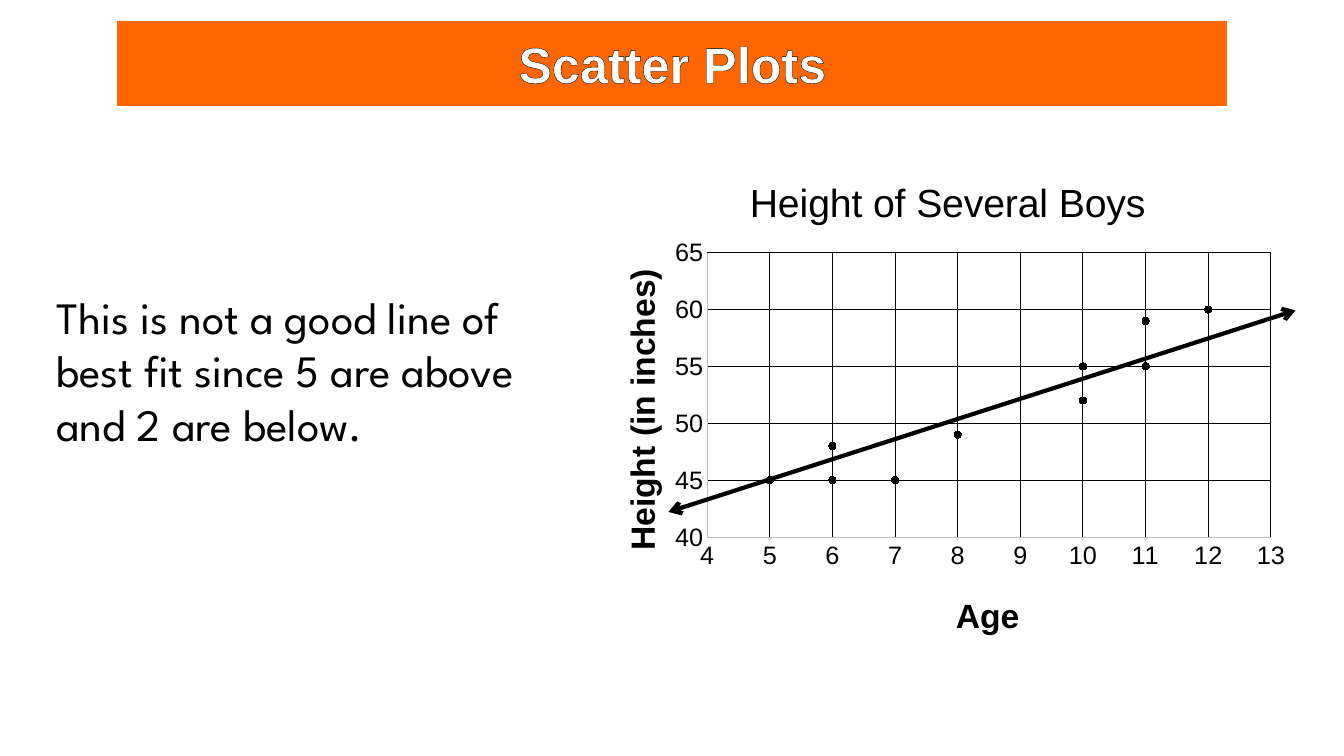
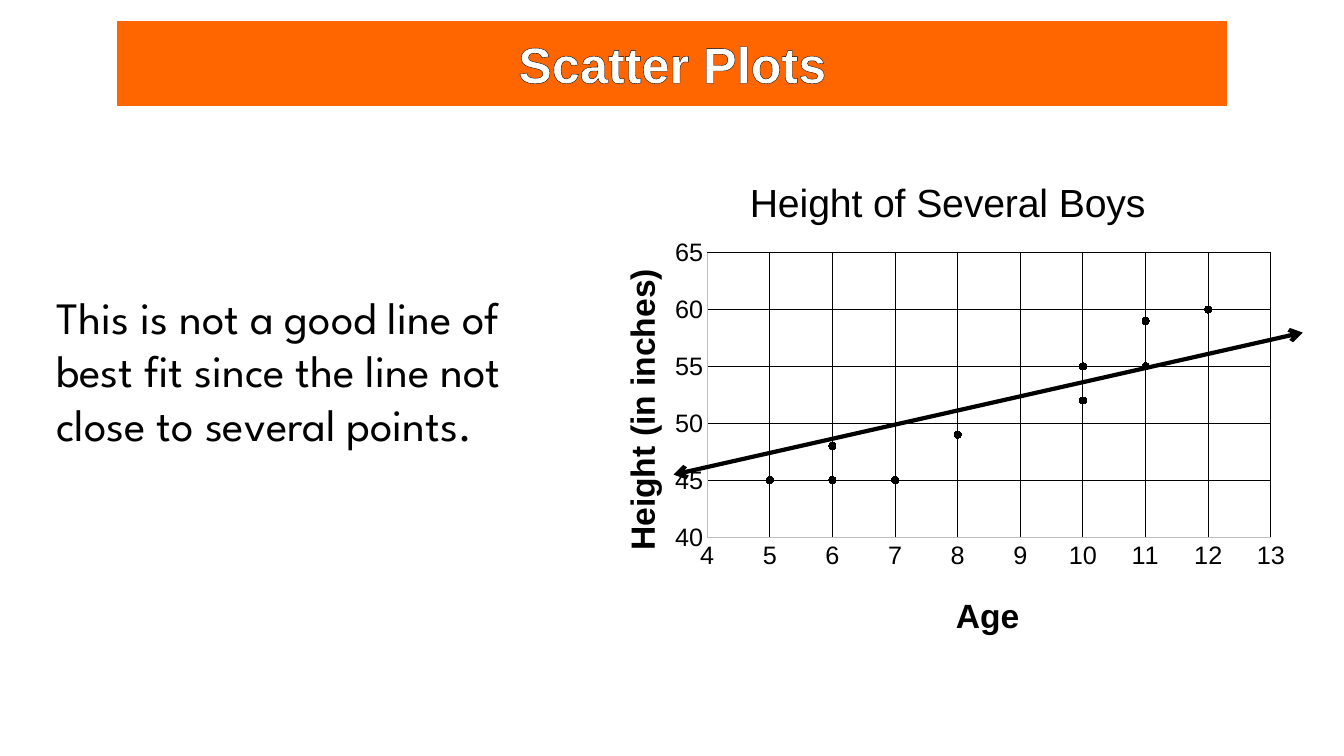
from typing import NamedTuple

from lxml.etree import SubElement
from pptx import Presentation
from pptx.chart.data import XyChartData
from pptx.dml.color import RGBColor
from pptx.enum.chart import XL_CHART_TYPE, XL_MARKER_STYLE, XL_TICK_MARK
from pptx.enum.shapes import MSO_CONNECTOR
from pptx.enum.text import MSO_ANCHOR, MSO_AUTO_SIZE, PP_ALIGN
from pptx.oxml import parse_xml
from pptx.oxml.ns import nsdecls, qn
from pptx.util import Cm, Pt

COLORS = {"banner": "FF6600", "banner_text": "FFFFFF", "ink": "000000", "axis": "BFBFBF"}
HEADING_FONT = "Arial"
BODY_FONT = "League Spartan"

BOYS = [(11, 55), (10, 55), (8, 49), (6, 45), (10, 52),
        (11, 59), (7, 45), (12, 60), (6, 48), (5, 45)]


class Box(NamedTuple):
    left: float
    top: float
    width: float
    height: float


class FitLine(NamedTuple):
    x1: float
    y1: float
    x2: float
    y2: float


class Example(NamedTuple):
    verdict: str
    fit_line: FitLine


class AxisStyle(NamedTuple):
    title: str
    title_left: float
    title_top: float
    minimum: int
    maximum: int
    step: int


BANNER = Box(2.97, 0.69, 27.94, 1.8)
VERDICT = Box(1.42, 7.29, 12.8, 4.11)
PLOT = Box(14.76, 3.68, 17.98, 12.8)

AGE_AXIS = AxisStyle("Age", 0.51, 0.87, 4, 13, 1)
HEIGHT_AXIS = AxisStyle("Height (in inches)", 0.04, 0.23, 40, 65, 5)

EXAMPLES = [
    Example("This is not a good line of best fit since 5 are above and 2 are below.",
            FitLine(16.84, 12.9, 32.64, 7.82)),
    Example("This is not a good line of best fit since the line not close to several points.",
            FitLine(16.97, 11.96, 32.82, 8.38)),
]


def color(name: str) -> RGBColor:
    return RGBColor.from_string(COLORS[name])


def place(shape, box: Box) -> None:
    shape.left, shape.top, shape.width, shape.height = (Cm(length) for length in box)


def style_font(font, size: float, name: str = HEADING_FONT,
               ink: str = "ink", bold: bool = False) -> None:
    font.size = Pt(size)
    font.name = name
    font.bold = bold
    font.color.rgb = color(ink)


def style_line(line, ink: str, width: float) -> None:
    line.color.rgb = color(ink)
    line.width = Pt(width)


def add_banner(slide) -> None:
    banner = slide.shapes.title
    place(banner, BANNER)
    banner.fill.solid()
    banner.fill.fore_color.rgb = color("banner")
    style_line(banner.line, "banner", 0.75)
    frame = banner.text_frame
    frame.text = "Scatter Plots"
    frame.vertical_anchor = MSO_ANCHOR.MIDDLE
    frame.auto_size = MSO_AUTO_SIZE.SHAPE_TO_FIT_TEXT
    heading = frame.paragraphs[0]
    heading.alignment = PP_ALIGN.CENTER
    heading.space_after = Pt(12)
    style_font(heading.font, 36, ink="banner_text", bold=True)
    outline = parse_xml(
        f'<a:ln {nsdecls("a")} w="{Pt(0.75)}"><a:solidFill>'
        f'<a:srgbClr val="{COLORS["ink"]}"/></a:solidFill></a:ln>')
    heading.runs[0].font._element.insert(0, outline)


def add_verdict(slide, text: str) -> None:
    body = slide.placeholders[1]
    place(body, VERDICT)
    frame = body.text_frame
    frame.text = text
    frame.word_wrap = True
    frame.auto_size = MSO_AUTO_SIZE.SHAPE_TO_FIT_TEXT
    frame.vertical_anchor = MSO_ANCHOR.TOP
    frame.margin_left = frame.margin_top = frame.margin_right = frame.margin_bottom = 0
    verdict = frame.paragraphs[0]
    verdict.alignment = PP_ALIGN.LEFT
    verdict.space_before = Pt(0)
    verdict.space_after = Pt(6)
    style_font(verdict.font, 32, BODY_FONT)
    properties = verdict._p.get_or_add_pPr()
    properties.set("marL", "0")
    properties.set("indent", "0")
    bullet_off = parse_xml(f'<a:buNone {nsdecls("a")}/>')
    properties.find(qn("a:defRPr")).addprevious(bullet_off)


def manual_layout(x: float, y: float, inner_size: str = ""):
    target = '<c:layoutTarget val="inner"/>' if inner_size else ""
    return parse_xml(
        f'<c:layout {nsdecls("c")}><c:manualLayout>{target}'
        f'<c:xMode val="edge"/><c:yMode val="edge"/>'
        f'<c:x val="{x}"/><c:y val="{y}"/>{inner_size}</c:manualLayout></c:layout>')


def set_title(owner, title, text: str, size: float, left: float, top: float,
              bold: bool = False) -> None:
    """Give a chart or an axis its title at a fraction of the chart's size."""
    owner.has_title = True
    title.text_frame.text = text
    style_font(title.text_frame.paragraphs[0].font, size, bold=bold)
    element = title._element
    for old in element.findall(qn("c:layout")):
        element.remove(old)
    element.find(qn("c:tx")).addnext(manual_layout(left, top))


def style_axis(axis, style: AxisStyle) -> None:
    axis.minimum_scale = style.minimum
    axis.maximum_scale = style.maximum
    axis.major_unit = style.step
    axis.major_tick_mark = axis.minor_tick_mark = XL_TICK_MARK.NONE
    axis.has_major_gridlines = True
    style_line(axis.major_gridlines.format.line, "ink", 0.75)
    style_line(axis.format.line, "axis", 0.75)
    style_font(axis.tick_labels.font, 18)
    set_title(axis, axis.axis_title, style.title, 24,
              style.title_left, style.title_top, bold=True)


def add_height_chart(slide) -> None:
    data = XyChartData(number_format="General")
    heights = data.add_series("Series 1")
    for age, height in BOYS:
        heights.add_data_point(age, height)
    chart = slide.shapes.add_chart(
        XL_CHART_TYPE.XY_SCATTER, *(Cm(length) for length in PLOT), data).chart
    chart.has_legend = False
    style_font(chart.font, 10)
    set_title(chart, chart.chart_title, "Height of Several Boys", 28, 0.22, 0.05)
    style_axis(chart.category_axis, AGE_AXIS)
    style_axis(chart.value_axis, HEIGHT_AXIS)

    plot = chart.plots[0]
    plot.vary_by_categories = False
    points = plot.series[0]
    points.smooth = False
    points.format.line.fill.background()
    points.marker.style = XL_MARKER_STYLE.CIRCLE
    points.marker.size = 5
    points.marker.format.fill.solid()
    points.marker.format.fill.fore_color.rgb = color("ink")
    style_line(points.marker.format.line, "ink", 0.75)

    plot_area = chart._chartSpace.chart.plotArea
    for old in plot_area.findall(qn("c:layout")):
        plot_area.remove(old)
    plot_area.insert(0, manual_layout(0.17, 0.21, '<c:w val="0.79"/><c:h val="0.56"/>'))


def add_fit_line(slide, fit: FitLine) -> None:
    arrow = slide.shapes.add_connector(
        MSO_CONNECTOR.STRAIGHT, *(Cm(length) for length in fit))
    style_line(arrow.line, "ink", 3)
    outline = arrow.line._get_or_add_ln()
    for end in ("a:headEnd", "a:tailEnd"):
        SubElement(outline, qn(end), type="arrow")
    SubElement(arrow._element.spPr, qn("a:effectLst"))


def main() -> None:
    deck = Presentation()
    deck.slide_width, deck.slide_height = Cm(33.86), Cm(19.05)
    for example in EXAMPLES:
        slide = deck.slides.add_slide(deck.slide_layouts[1])
        add_banner(slide)
        add_height_chart(slide)
        add_verdict(slide, example.verdict)
        add_fit_line(slide, example.fit_line)
    deck.save("out.pptx")


if __name__ == "__main__":
    main()
